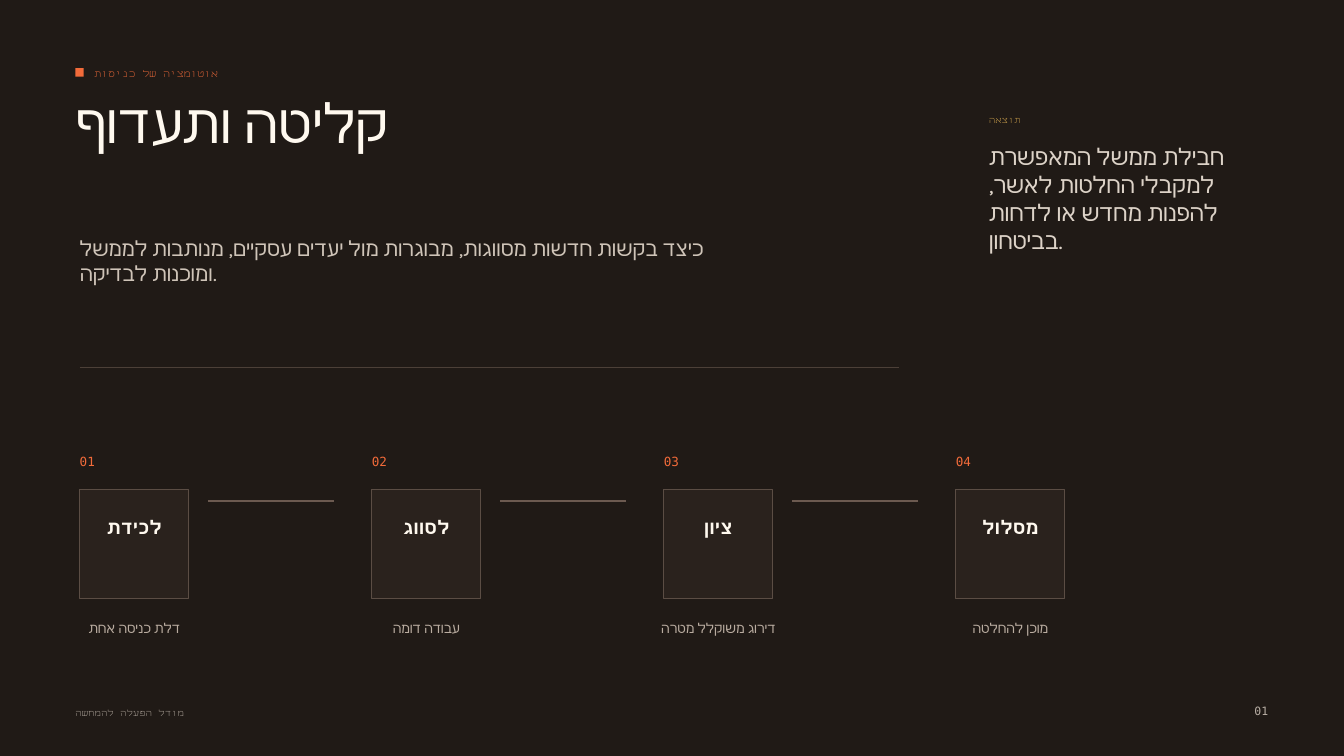
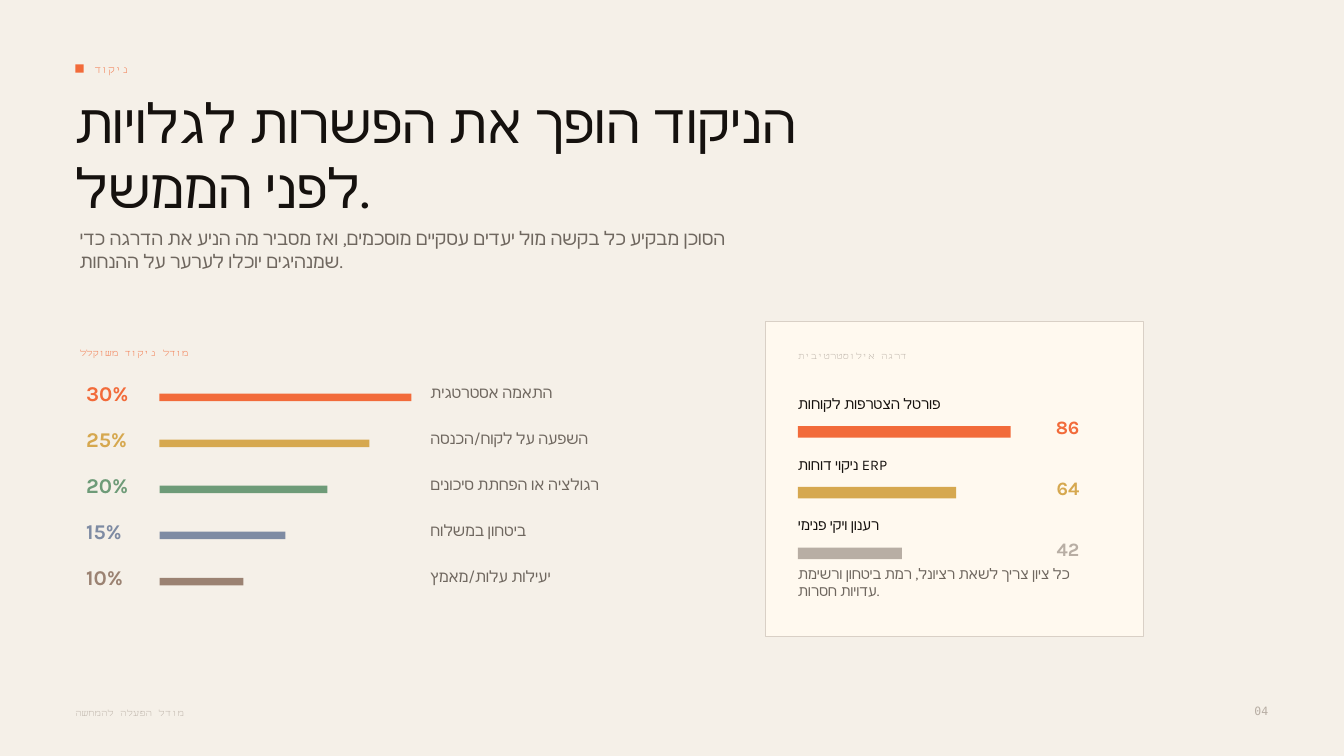
from lxml import etree
from pptx import Presentation
from pptx.dml.color import RGBColor
from pptx.enum import shapes, text
from pptx.oxml import ns
from pptx.util import Cm, Pt

SANS, MONO = "Karla", "DejaVu Sans Mono"
ORANGE, GOLD, GREEN, BLUE, BROWN = "F26B3A", "D6A84F", "6E9B78", "7E8BA3", "9B8272"
STONE, CREAM, INK, GREY = "B8AEA4", "FFF9EF", "15110E", "6F675F"
LEFT, RIGHT = text.PP_ALIGN.LEFT, text.PP_ALIGN.RIGHT
CENTER = text.PP_ALIGN.CENTER
MARGIN, INDENT = 1.9, 2.01

FOOTER = "מודל הפעלה להמחשה"

INTAKE = {
    "number": "01", "background": "201A16", "title_color": CREAM,
    "eyebrow": "אוטומציה של כניסות", "eyebrow_top": 1.52,
    "title": "קליטה ותעדוף", "title_width": 20.12,
}
INTAKE_LEAD = ("כיצד בקשות חדשות מסווגות, מבוגרות מול יעדים עסקיים, "
               "מנותבות לממשל ומוכנות לבדיקה.")
OUTCOME_LABEL = "תוצאה"
OUTCOME = "חבילת ממשל המאפשרת למקבלי החלטות לאשר, להפנות מחדש או לדחות בביטחון."
STEPS = [
    ("לכידת", "דלת כניסה אחת"),
    ("לסווג", "עבודה דומה"),
    ("ציון", "דירוג משוקלל מטרה"),
    ("מסלול", "מוכן להחלטה"),
]

SCORING = {
    "number": "04", "background": "F5F0E8", "title_color": INK,
    "eyebrow": "ניקוד", "eyebrow_top": 1.42,
    "title": "הניקוד הופך את הפשרות לגלויות לפני הממשל.", "title_width": 20.64,
}
SCORING_LEAD = ("הסוכן מבקיע כל בקשה מול יעדים עסקיים מוסכמים, ואז מסביר מה הניע "
                "את הדרגה כדי שמנהיגים יוכלו לערער על ההנחות.")
MODEL_LABEL = "מודל ניקוד משוקלל"
WEIGHTS = [
    (30, "התאמה אסטרטגית", ORANGE),
    (25, "השפעה על לקוח/הכנסה", GOLD),
    (20, "רגולציה או הפחתת סיכונים", GREEN),
    (15, "ביטחון במשלוח", BLUE),
    (10, "יעילות עלות/מאמץ", BROWN),
]
RANK_LABEL = "דרגה אילוסטרטיבית"
RANKS = [
    (86, "פורטל הצטרפות לקוחות", ORANGE),
    (64, "ניקוי דוחות ERP", GOLD),
    (42, "רענון ויקי פנימי", STONE),
]
RANK_NOTE = "כל ציון צריך לשאת רציונל, רמת ביטחון ורשימת עדויות חסרות."


def rgb(value):
    return RGBColor.from_string(value)


def add_text(page, area, content, size, color, font=SANS, bold=False,
             align=LEFT, anchor=text.MSO_ANCHOR.TOP):
    """Place one run of text in area: left, top, width, height in cm."""
    frame = page.shapes.add_textbox(*map(Cm, area)).text_frame
    frame.word_wrap = True
    frame.vertical_anchor = anchor
    frame.margin_left = frame.margin_right = 0
    frame.margin_top = frame.margin_bottom = 0
    para = frame.paragraphs[0]
    para.alignment = align
    span = para.add_run()
    span.text = content
    span.font.size = Pt(size)
    span.font.bold = bold
    span.font.color.rgb = rgb(color)
    span.font.name = font
    # Hebrew takes its typeface from the complex-script element.
    etree.SubElement(span.font._element, ns.qn("a:cs")).set("typeface", font)


def add_rect(page, area, fill, line=None):
    box = page.shapes.add_shape(shapes.MSO_SHAPE.RECTANGLE, *map(Cm, area))
    box.shadow.inherit = False
    box.fill.solid()
    box.fill.fore_color.rgb = rgb(fill)
    if line:
        box.line.color.rgb = rgb(line)
        box.line.width = Pt(0.75)
    else:
        box.line.fill.background()


def add_rule(page, left, top, width, color, weight):
    rule = page.shapes.add_connector(
        shapes.MSO_CONNECTOR.STRAIGHT, Cm(left), Cm(top), Cm(left + width), Cm(top))
    rule.line.color.rgb = rgb(color)
    rule.line.width = Pt(weight)
    etree.SubElement(rule._element.spPr, ns.qn("a:effectLst"))


def add_page(deck, frame):
    """Start a slide with its background, eyebrow, title and footer."""
    page = deck.slides.add_slide(deck.slide_layouts[6])
    page.background.fill.solid()
    page.background.fill.fore_color.rgb = rgb(frame["background"])
    top = frame["eyebrow_top"]
    add_rect(page, (MARGIN, top + 0.2, 0.21, 0.21), ORANGE)
    add_text(page, (2.38, top, 11.11, 0.64), frame["eyebrow"], 8.2, ORANGE, MONO,
             anchor=text.MSO_ANCHOR.MIDDLE)
    add_text(page, (MARGIN, 2.24, frame["title_width"], 3.5), frame["title"], 39,
             frame["title_color"])
    add_text(page, (MARGIN, 17.78, 8.47, 0.48), FOOTER, 7.5, STONE, MONO)
    add_text(page, (30.69, 17.73, 1.27, 0.53), frame["number"], 8.2, STONE, MONO,
             align=RIGHT)
    return page


def build_intake(deck):
    page = add_page(deck, INTAKE)
    add_text(page, (INDENT, 5.93, 16.14, 2.33), INTAKE_LEAD, 15, "CFC4B8")
    add_rule(page, INDENT, 9.27, 20.64, "4C4038", 0.75)
    add_text(page, (24.92, 2.84, 2.91, 0.48), OUTCOME_LABEL, 7.5, GOLD, MONO)
    add_text(page, (24.92, 3.6, 6.6, 4.23), OUTCOME, 16.5, "DDD3C8")

    pitch, side = 7.36, 2.75
    for index, (name, caption) in enumerate(STEPS):
        left = INDENT + index * pitch
        add_text(page, (left, 11.43, 1.42, 0.64), f"{index + 1:02}", 9, ORANGE, MONO)
        add_rect(page, (left, 12.33, side, side), "2A221D", "5B4D44")
        add_text(page, (left + 0.37, 13, 2.01, 0.69), name, 13.5, CREAM, bold=True,
                 align=CENTER)
        add_text(page, (left - 0.5, 15.62, side + 1, 0.64), caption, 9.8, "B9ACA0",
                 align=CENTER)
        if index < len(STEPS) - 1:
            add_rule(page, left + 3.23, 12.62, 3.18, "6C5A50", 1.5)


def build_scoring(deck):
    page = add_page(deck, SCORING)
    add_text(page, (INDENT, 5.72, 17.2, 1.85), SCORING_LEAD, 13.5, GREY)

    add_text(page, (INDENT, 8.73, 7.41, 0.48), MODEL_LABEL, 7.5, ORANGE, MONO)
    longest = max(weight for weight, _, _ in WEIGHTS)
    for index, (weight, name, color) in enumerate(WEIGHTS):
        top = 9.58 + index * 1.16
        add_text(page, (2.17, top, 1.52, 0.64), f"{weight}%", 15, color, bold=True)
        add_rect(page, (4.02, top + 0.34, 6.35 * weight / longest, 0.19), color)
        add_text(page, (10.85, top + 0.06, 6.6, 0.53), name, 11.2, GREY)

    inner = 20.11
    add_rect(page, (19.3, 8.1, 9.53, 7.94), CREAM, "D9D0C6")
    add_text(page, (inner, 8.79, 4.76, 0.48), RANK_LABEL, 7.5, STONE, MONO)
    for index, (score, name, color) in enumerate(RANKS):
        top = 9.95 + index * 1.53
        add_text(page, (inner, top, 5.56, 0.58), name, 10.5, INK)
        add_rect(page, (inner, top + 0.79, 6.23 * score / 100, 0.29), color)
        add_text(page, (25.93, top + 0.53, 1.27, 0.58), str(score), 13.5, color,
                 bold=True, align=RIGHT)
    add_text(page, (inner, 14.23, 7.14, 1.38), RANK_NOTE, 10.5, GREY)


def main():
    deck = Presentation()
    deck.slide_width, deck.slide_height = Cm(33.87), Cm(19.05)
    build_intake(deck)
    build_scoring(deck)
    deck.save("out.pptx")


if __name__ == "__main__":
    main()
